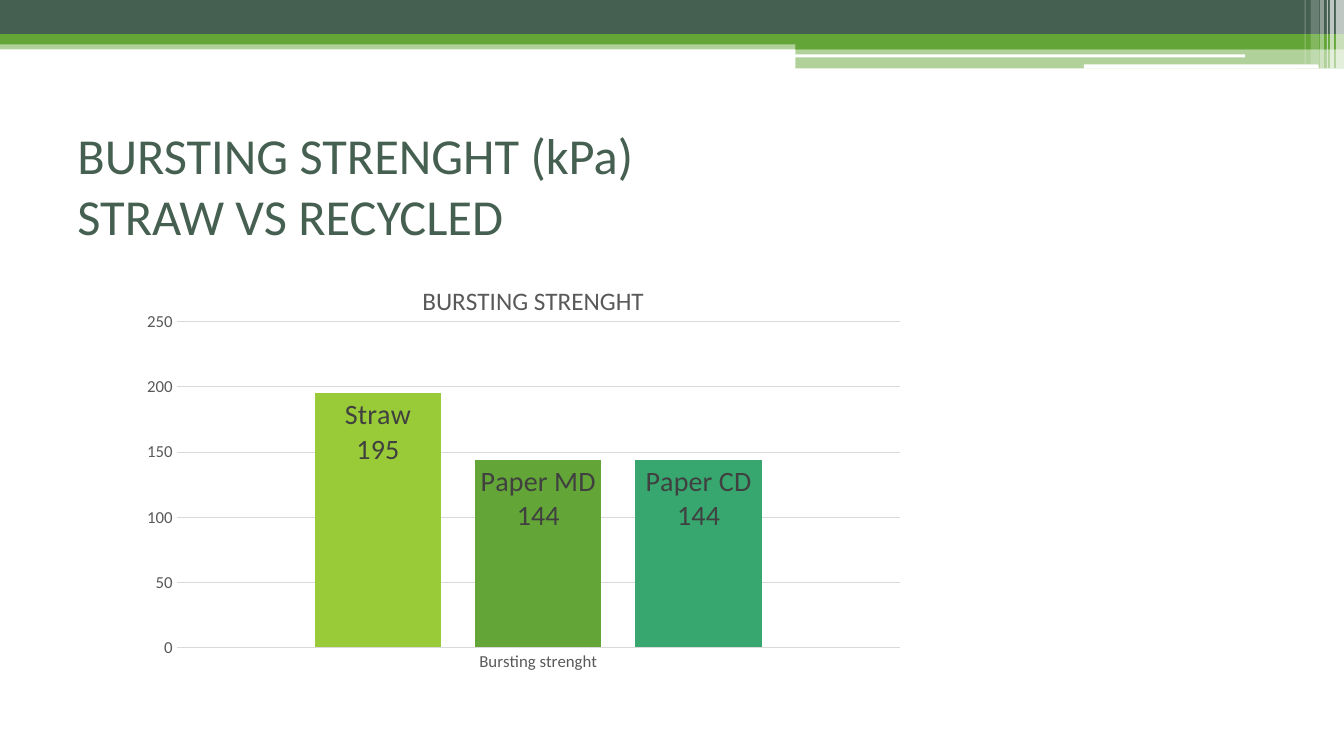
from lxml.etree import SubElement
from pptx import Presentation
from pptx.chart.data import CategoryChartData
from pptx.dml.color import RGBColor
from pptx.enum.chart import XL_CHART_TYPE, XL_LABEL_POSITION, XL_TICK_MARK
from pptx.enum.shapes import MSO_SHAPE
from pptx.enum.text import MSO_ANCHOR
from pptx.oxml import parse_xml
from pptx.oxml.ns import nsdecls, qn
from pptx.util import Inches, Pt

DARK_GREEN = RGBColor(0x45, 0x5F, 0x51)
GREEN = RGBColor(0x63, 0xA5, 0x37)
LIME = RGBColor(0x99, 0xCB, 0x38)
TEAL = RGBColor(0x37, 0xA7, 0x6F)
WHITE = RGBColor(0xFF, 0xFF, 0xFF)
AXIS_GRAY = RGBColor(0x59, 0x59, 0x59)
LABEL_GRAY = RGBColor(0x40, 0x40, 0x40)
LINE_GRAY = RGBColor(0xD9, 0xD9, 0xD9)

# left, top, width, height, colour, opacity in percent
BANDS = [
    (0, 0.4, 13.33, 0.09, GREEN, 50),
    (0, 0, 13.33, 0.34, DARK_GREEN, 100),
    (0, 0.34, 13.33, 0.1, GREEN, 100),
    (7.89, 0.39, 5.44, 0.1, GREEN, 100),
    (7.89, 0.48, 5.44, 0.2, GREEN, 50),
]
WHITE_RULES = [(7.88, 0.54, 4.47, 0.03), (10.75, 0.64, 2.33, 0.04)]
# left, width, height, opacity in percent
CORNER_STRIPES = [
    (13.25, 0.08, 0.68, 65),
    (13.19, 0.04, 0.68, 65),
    (13.16, 0.01, 0.68, 60),
    (13.09, 0.04, 0.68, 40),
    (13, 0.08, 0.64, 20),
    (12.94, 0.01, 0.64, 30),
]
STRENGTHS = [("Straw", 195, LIME), ("Paper MD", 144, GREEN), ("Paper CD", 144, TEAL)]


class SlideBuilder:
    font_name = "Calibri"

    def __init__(self, slide):
        self.slide = slide

    def style_font(self, font, size, color):
        font.name = self.font_name
        font.size = Pt(size)
        font.bold = False
        font.color.rgb = color

    def bar(self, left, top, width, height, color, opacity=100, kind=MSO_SHAPE.RECTANGLE):
        shape = self.slide.shapes.add_shape(
            kind, Inches(left), Inches(top), Inches(width), Inches(height))
        shape.shadow.inherit = False
        shape.fill.solid()
        shape.fill.fore_color.rgb = color
        shape.line.fill.background()
        if opacity < 100:
            color_element = shape.fill._xPr.find(qn("a:solidFill"))[0]
            SubElement(color_element, qn("a:alpha"), val=str(opacity * 1000))

    def title(self, lines, left, top, width, height):
        box = self.slide.shapes.add_textbox(
            Inches(left), Inches(top), Inches(width), Inches(height))
        frame = box.text_frame
        frame.word_wrap = True
        frame.vertical_anchor = MSO_ANCHOR.MIDDLE
        paragraph = frame.paragraphs[0]
        for index, line in enumerate(lines):
            if index:
                paragraph.add_line_break()
            run = paragraph.add_run()
            run.text = line
            self.style_font(run.font, 36, DARK_GREEN)

    def column_chart(self, title, category, rows, left, top, width, height):
        data = CategoryChartData()
        data.categories = [category]
        for name, value, _ in rows:
            data.add_series(name, [value])
        chart = self.slide.shapes.add_chart(
            XL_CHART_TYPE.COLUMN_CLUSTERED, Inches(left), Inches(top),
            Inches(width), Inches(height), data).chart
        chart.has_legend = False
        chart.font.name = self.font_name
        chart.font.size = Pt(10)
        self.chart_title(chart, title)
        self.axes(chart)
        plot = chart.plots[0]
        plot.vary_by_categories = False
        plot.gap_width = 219
        plot.overlap = -27
        for series, (_, _, color) in zip(plot.series, rows):
            self.column(series, color)
        self.place(chart._chartSpace.chart.plotArea, 0.087, 0.133, 0.819, 0.701)

    def chart_title(self, chart, text):
        chart.has_title = True
        title = chart.chart_title
        title.include_in_layout = False
        run = title.text_frame.paragraphs[0].add_run()
        run.text = text
        self.style_font(run.font, 18, AXIS_GRAY)
        self.place(title._element, 0.36, 0.04)

    def axes(self, chart):
        for axis in (chart.category_axis, chart.value_axis):
            axis.major_tick_mark = XL_TICK_MARK.NONE
            axis.minor_tick_mark = XL_TICK_MARK.NONE
            self.style_font(axis.tick_labels.font, 12, AXIS_GRAY)
        value_axis = chart.value_axis
        value_axis.minimum_scale = 0
        value_axis.maximum_scale = 250
        value_axis.major_unit = 50
        value_axis.has_major_gridlines = True
        value_axis.format.line.fill.background()
        for line in (chart.category_axis.format.line, value_axis.major_gridlines.format.line):
            line.color.rgb = LINE_GRAY
            line.width = Pt(0.75)

    def column(self, series, color):
        series.format.fill.solid()
        series.format.fill.fore_color.rgb = color
        labels = series.data_labels
        labels.show_value = True
        labels.show_series_name = True
        labels.position = XL_LABEL_POSITION.INSIDE_END
        self.style_font(labels.font, 20, LABEL_GRAY)
        separator = parse_xml(f"<c:separator {nsdecls('c')}>\n</c:separator>")
        labels._element.find(qn("c:showBubbleSize")).addnext(separator)

    @staticmethod
    def place(element, x, y, width=None, height=None):
        """Fix a chart part at fractions of the chart's size."""
        for old_layout in element.findall(qn("c:layout")):
            element.remove(old_layout)
        layout = parse_xml(f"<c:layout {nsdecls('c')}/>")
        manual = SubElement(layout, qn("c:manualLayout"))
        if width:
            SubElement(manual, qn("c:layoutTarget"), val="inner")
        settings = [("xMode", "edge"), ("yMode", "edge"), ("x", x), ("y", y),
                    ("w", width), ("h", height)]
        for tag, value in settings:
            if value is not None:
                SubElement(manual, qn(f"c:{tag}"), val=str(value))
        text = element.find(qn("c:tx"))
        if text is None:
            element.insert(0, layout)
        else:
            text.addnext(layout)


def main():
    presentation = Presentation()
    presentation.slide_width = Inches(13.33)
    presentation.slide_height = Inches(7.5)
    builder = SlideBuilder(presentation.slides.add_slide(presentation.slide_layouts[6]))
    for band in BANDS:
        builder.bar(*band)
    for rule in WHITE_RULES:
        builder.bar(*rule, WHITE, kind=MSO_SHAPE.ROUNDED_RECTANGLE)
    for left, width, height, opacity in CORNER_STRIPES:
        builder.bar(left, 0, width, height, WHITE, opacity)
    builder.title(["BURSTING STRENGHT (kPa) ", "STRAW VS RECYCLED"], 0.67, 1.25, 12, 1.17)
    builder.column_chart("BURSTING STRENGHT", "Bursting strenght", STRENGTHS,
                         0.99, 2.58, 8.76, 4.61)
    presentation.save("out.pptx")


if __name__ == "__main__":
    main()
